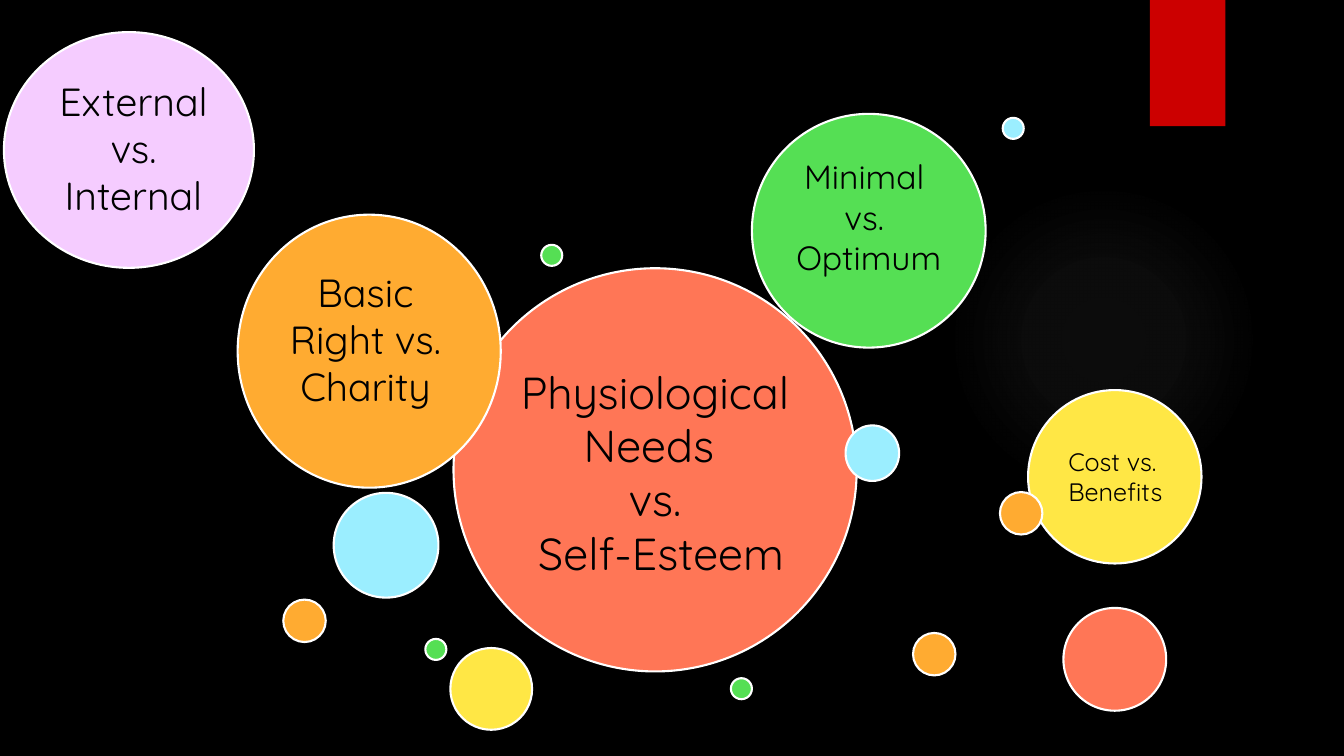
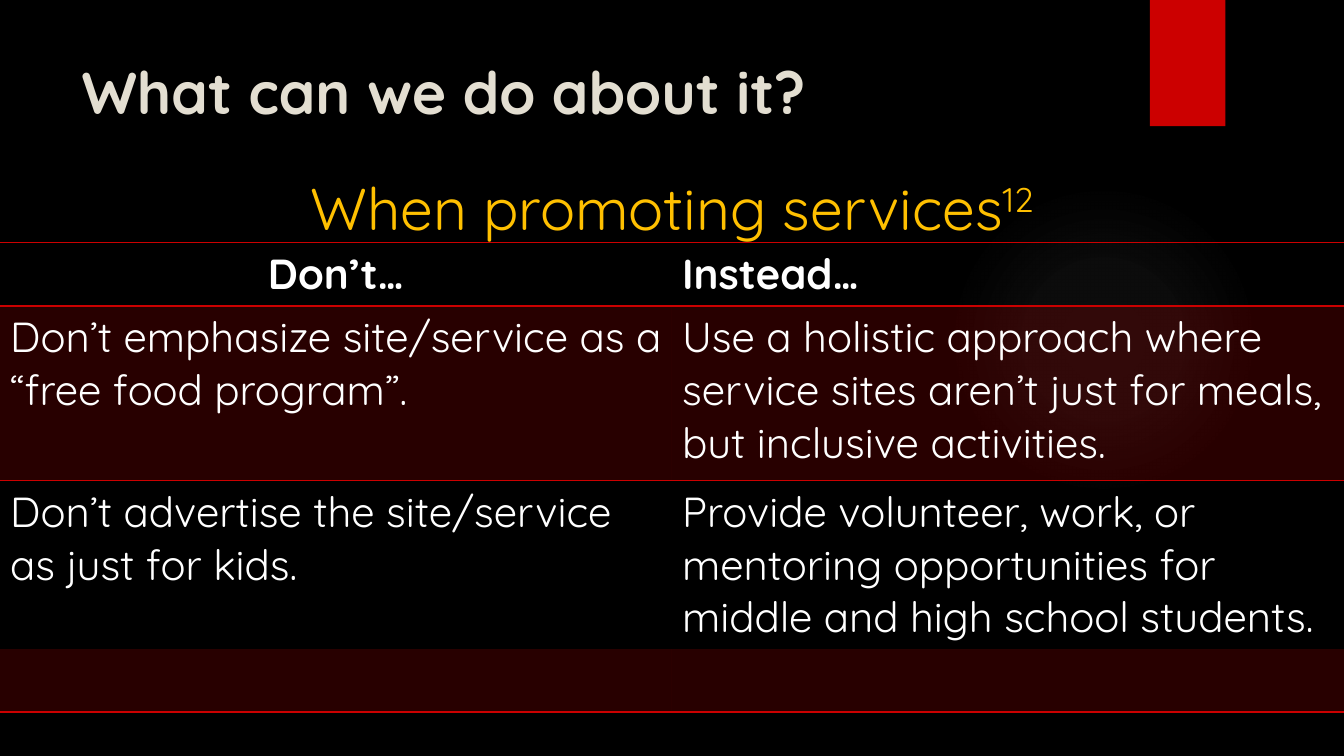
from dataclasses import dataclass
from typing import Optional

from pptx import Presentation
from pptx.dml.color import RGBColor
from pptx.enum.shapes import MSO_SHAPE
from pptx.enum.text import MSO_ANCHOR, MSO_AUTO_SIZE, PP_ALIGN
from pptx.oxml import parse_xml
from pptx.oxml.ns import nsdecls, qn
from pptx.util import Cm, Pt

FONT = "Quicksand"
COLORS = {
    "black": "000000", "white": "FFFFFF", "red": "CC0000", "cream": "E3DED1",
    "gold": "FFC000", "coral": "FF7656", "green": "55DF54", "yellow": "FFE745",
    "orange": "FFAB31", "sky": "9BEEFF", "lilac": "F5CCFF", "glow": "ADADAD",
}
SLIDE_WIDTH, SLIDE_HEIGHT = 33.87, 19.05
NO_STYLE_TABLE = "{2D5ABB26-0587-4C30-8999-92F81FD0307C}"


@dataclass
class Box:
    left: float
    top: float
    width: float
    height: float

    def lengths(self) -> tuple:
        return Cm(self.left), Cm(self.top), Cm(self.width), Cm(self.height)


@dataclass
class Label:
    box: Box
    lines: list[str]
    size: int
    align: PP_ALIGN = PP_ALIGN.CENTER


@dataclass
class Bubble:
    color: str
    left: float
    top: float
    width: float
    height: Optional[float] = None
    label: Optional[Label] = None


# Bubbles from back to front, in centimetres
DOT, SMALL = 0.53, 1.07
BUBBLES = [
    Bubble("coral", 11.43, 6.76, 10.16, label=Label(
        Box(11.05, 7.72, 10.92, 9.14),
        ["Physiological Needs ", "vs.", " Self-Esteem"], 32)),
    Bubble("green", 18.95, 2.87, 5.89, label=Label(
        Box(17.88, 2.97, 8.03, 5.77), ["Minimal ", "vs. ", "Optimum"], 24)),
    Bubble("yellow", 25.91, 9.83, 4.37, label=Label(
        Box(25.91, 10.59, 5.21, 3.61), ["Cost vs. Benefits"], 18, PP_ALIGN.LEFT)),
    Bubble("orange", 5.99, 5.41, 6.63, 6.88, label=Label(
        Box(6.1, 5.69, 6.22, 6.5), ["Basic Right vs. Charity"], 28)),
    Bubble("coral", 26.8, 15.32, 2.59),
    Bubble("orange", 25.2, 12.4, SMALL),
    Bubble("sky", 8.41, 12.42, 2.64),
    Bubble("yellow", 11.35, 16.33, 2.06),
    Bubble("sky", 21.31, 10.72, 1.35, 1.4),
    Bubble("orange", 7.14, 15.11, SMALL),
    Bubble("orange", 23.01, 15.95, SMALL),
    Bubble("green", 18.42, 17.09, DOT),
    Bubble("green", 13.64, 6.17, DOT),
    Bubble("green", 10.72, 16.1, DOT),
    Bubble("sky", 25.27, 2.97, DOT),
    Bubble("lilac", 0.1, 0.81, 6.3, 5.94, label=Label(
        Box(0, 1.04, 6.73, 5.41), ["External vs. Internal"], 28)),
]

TABLE_ROWS = [
    ("Don’t…", "Instead…"),
    ("Don’t emphasize site/service as a “free food program”.",
     "Use a holistic approach where service sites aren’t just for meals, "
     "but inclusive activities."),
    ("Don’t advertise the site/service as just for kids.",
     "Provide volunteer, work, or mentoring opportunities for middle and "
     "high school students."),
    ("", ""),
]
ROW_HEIGHTS = [1.59, 4.4, 4.25, 1.58]


def rgb(name: str) -> RGBColor:
    return RGBColor.from_string(COLORS[name])


def add_run(paragraph, text: str, size: int, color: str, bold: bool = False):
    run = paragraph.add_run()
    run.text = text
    run.font.name = FONT
    run.font.size = Pt(size)
    run.font.bold = bold
    run.font.color.rgb = rgb(color)
    return run


def add_plain_shape(slide, kind: MSO_SHAPE, box: Box,
                    fill: Optional[str] = None, line: Optional[str] = None):
    shape = slide.shapes.add_shape(kind, *box.lengths())
    shape.shadow.inherit = False
    if fill:
        shape.fill.solid()
        shape.fill.fore_color.rgb = rgb(fill)
    else:
        shape.fill.background()
    if line:
        shape.line.color.rgb = rgb(line)
        shape.line.width = Pt(1.5)
    else:
        shape.line.fill.background()
    return shape


def decorate_master(presentation, slide) -> None:
    """Give the master its background, soft glow and red tag."""
    master = presentation.slide_master
    master.background.fill.solid()
    master.background.fill.fore_color.rgb = rgb("black")

    glow = add_plain_shape(slide, MSO_SHAPE.OVAL, Box(23.9, 4.65, 7.82, 7.82))
    stops = "".join(
        f'<a:gs pos="{position * 1000}"><a:srgbClr val="{COLORS["glow"]}">'
        f'<a:alpha val="{alpha * 1000}"/></a:srgbClr></a:gs>'
        for position, alpha in ((0, 7), (36, 6), (69, 0)))
    properties = glow.element.spPr
    properties.replace(properties.find(qn("a:noFill")), parse_xml(
        f'<a:gradFill {nsdecls("a")}><a:gsLst>{stops}</a:gsLst><a:path path="circle">'
        '<a:fillToRect l="50000" t="50000" r="50000" b="50000"/></a:path></a:gradFill>'))

    tag = add_plain_shape(slide, MSO_SHAPE.RECTANGLE, Box(28.98, 0, 1.9, 3.18), "red")
    tag.element.spPr.find(qn("a:effectLst")).append(parse_xml(
        f'<a:outerShdw {nsdecls("a")} blurRad="{Pt(3)}" dist="{Pt(2)}" dir="5400000">'
        f'<a:srgbClr val="{COLORS["black"]}"><a:alpha val="45000"/></a:srgbClr>'
        '</a:outerShdw>'))

    # Moving the elements puts them behind the content of every slide
    for number, shape in enumerate((glow, tag)):
        shape.element.nvSpPr.cNvPr.set("id", str(101 + number))
        master.shapes.element.insert(2 + number, shape.element)


def add_label(slide, label: Label) -> None:
    shape = add_plain_shape(slide, MSO_SHAPE.OVAL, label.box)
    frame = shape.text_frame
    frame.word_wrap = True
    frame.vertical_anchor = MSO_ANCHOR.TOP
    for index, line in enumerate(label.lines):
        paragraph = frame.add_paragraph() if index else frame.paragraphs[0]
        paragraph.alignment = label.align
        add_run(paragraph, line, label.size, "black")


def add_bubble(slide, bubble: Bubble) -> None:
    box = Box(bubble.left, bubble.top, bubble.width, bubble.height or bubble.width)
    add_plain_shape(slide, MSO_SHAPE.OVAL, box, bubble.color, "white")
    if bubble.label:
        add_label(slide, bubble.label)


def set_title(slide, text: str) -> None:
    title = slide.shapes.title
    title.left, title.top, title.width, title.height = Box(1.8, 1.27, 26.14, 3.89).lengths()
    frame = title.text_frame
    frame.word_wrap = True
    frame.auto_size = MSO_AUTO_SIZE.NONE
    frame.vertical_anchor = MSO_ANCHOR.TOP
    paragraph = frame.paragraphs[0]
    paragraph.alignment = PP_ALIGN.LEFT
    add_run(paragraph, text, 42, "cream", bold=True)


def format_cell(cell, row: int) -> None:
    """Tint odd rows and rule off the header and the last row."""
    properties = cell._tc.get_or_add_tcPr()
    last = len(TABLE_ROWS) - 1
    for side, ruled in (("lnT", row in (0, 1)), ("lnB", row in (0, last))):
        if ruled:
            properties.append(parse_xml(
                f'<a:{side} {nsdecls("a")} w="{Pt(1)}"><a:solidFill>'
                f'<a:srgbClr val="{COLORS["red"]}"/></a:solidFill></a:{side}>'))
    if row % 2:
        cell.fill.solid()
        cell.fill.fore_color.rgb = rgb("red")
        color = properties.find(qn("a:solidFill")).find(qn("a:srgbClr"))
        color.append(parse_xml(f'<a:alpha {nsdecls("a")} val="20000"/>'))
    else:
        cell.fill.background()


def add_advice_table(slide) -> None:
    box = Box(0, 6.12, SLIDE_WIDTH, sum(ROW_HEIGHTS))
    frame = slide.shapes.add_table(len(TABLE_ROWS), 2, *box.lengths())
    table = frame.table
    table.first_row = table.horz_banding = False
    next(frame.element.iter(qn("a:tableStyleId"))).text = NO_STYLE_TABLE
    for column in table.columns:
        column.width = Cm(SLIDE_WIDTH / 2)
    for row, texts in enumerate(TABLE_ROWS):
        table.rows[row].height = Cm(ROW_HEIGHTS[row])
        for column, text in enumerate(texts):
            cell = table.cell(row, column)
            format_cell(cell, row)
            paragraph = cell.text_frame.paragraphs[0]
            if text:
                add_run(paragraph, text, 30, "white", bold=row == 0)
    table.cell(0, 0).text_frame.paragraphs[0].alignment = PP_ALIGN.CENTER


def add_subtitle(slide) -> None:
    text_box = slide.shapes.add_textbox(*Box(0, 4.19, SLIDE_WIDTH, 3.89).lengths())
    text_box.text_frame.word_wrap = True
    paragraph = text_box.text_frame.paragraphs[0]
    paragraph.alignment = PP_ALIGN.CENTER
    add_run(paragraph, "When promoting services", 42, "gold")
    reference = add_run(paragraph, "12", 42, "gold")
    reference._r.get_or_add_rPr().set("baseline", "30000")


def main() -> None:
    presentation = Presentation()
    presentation.slide_width = Cm(SLIDE_WIDTH)
    presentation.slide_height = Cm(SLIDE_HEIGHT)
    layouts = presentation.slide_layouts

    # Slide 1: bubbles of opposing ideas
    bubble_slide = presentation.slides.add_slide(layouts.get_by_name("Blank"))
    decorate_master(presentation, bubble_slide)
    for bubble in BUBBLES:
        add_bubble(bubble_slide, bubble)

    # Slide 2: table of advice
    advice_slide = presentation.slides.add_slide(layouts.get_by_name("Title Only"))
    set_title(advice_slide, "What can we do about it?")
    add_advice_table(advice_slide)
    add_subtitle(advice_slide)

    presentation.save("out.pptx")


if __name__ == "__main__":
    main()
